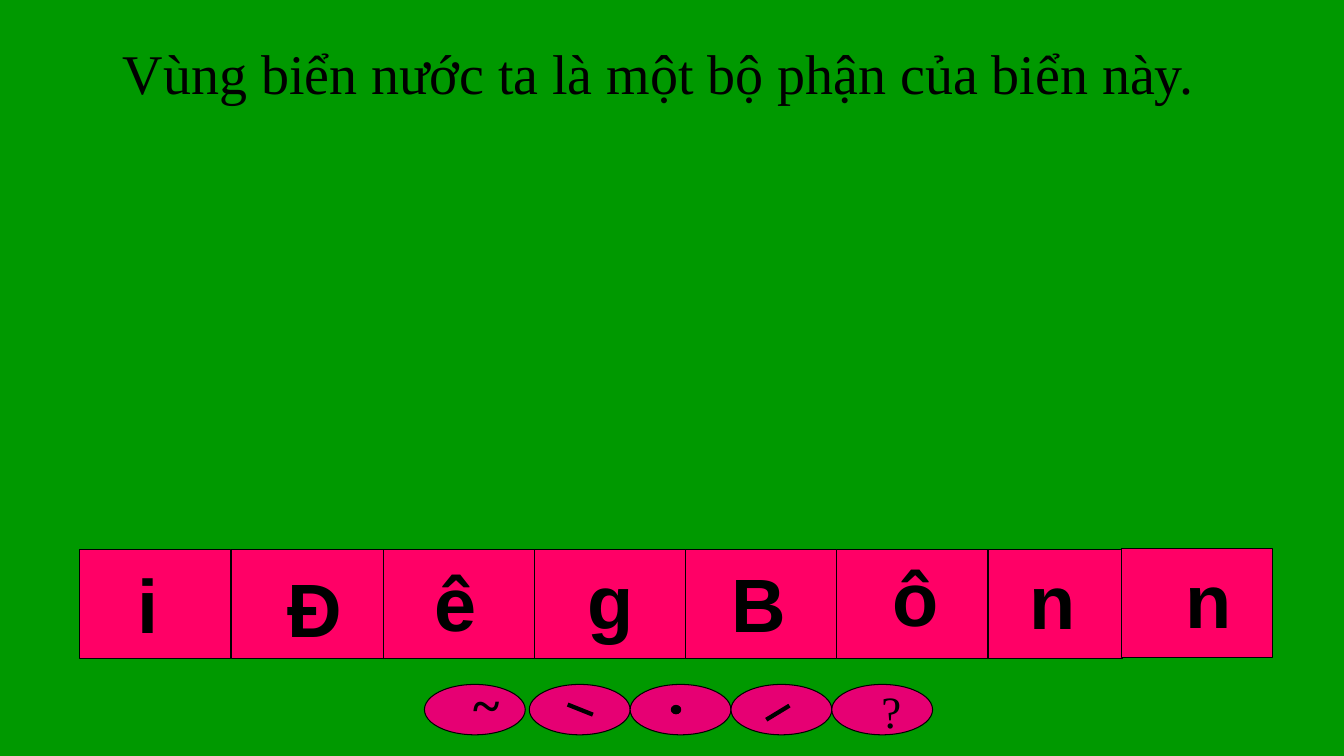
from lxml.etree import SubElement
from pptx import Presentation
from pptx.dml.color import RGBColor
from pptx.enum.shapes import MSO_CONNECTOR, MSO_SHAPE
from pptx.enum.text import MSO_ANCHOR, MSO_AUTO_SIZE, PP_ALIGN
from pptx.oxml.ns import qn
from pptx.util import Inches, Pt

HEX = {"green": "009900", "tile": "FF0066", "oval": "E60073", "ink": "000000"}
SERIF = "Times New Roman"
TITLE = {"name": SERIF, "size": Pt(40)}
LETTER = {"name": "Arial", "size": Pt(54), "bold": True}
ASK = {"name": SERIF, "size": Pt(32)}
TILDE = {"name": SERIF, "size": Pt(36), "bold": True}

# Tile left and top, then letter with its left, top and width
TILES = [
    (9.63, 5.45, "n", 10.11, 5.45, 0.66),
    (8.3, 5.45, "ô", 8.75, 5.42, 0.66),
    (6.8, 5.45, "B", 7.15, 5.48, 0.75),
    (5.3, 5.45, "g", 5.73, 5.45, 0.66),
    (3.8, 5.45, "ê", 4.21, 5.47, 0.62),
    (2.3, 5.45, "Đ", 2.75, 5.53, 0.75),
    (11.12, 5.44, "n", 11.66, 5.44, 0.66),
    (0.79, 5.45, "i", 1.26, 5.49, 0.41),
]
OVALS = [4.21, 5.25, 6.25, 7.25, 8.25]
STROKES = [(5.63, 6.99, 5.88, 7.09), (7.83, 7, 7.6, 7.14)]


def color(name):
    return RGBColor.from_string(HEX[name])


def add_shape(slide, kind, box, fill, width=0.75):
    shape = slide.shapes.add_shape(kind, *map(Inches, box))
    shape.shadow.inherit = False
    shape.fill.solid()
    shape.fill.fore_color.rgb = color(fill)
    shape.line.color.rgb = color("ink")
    shape.line.width = Pt(width)


def add_text(slide, text, box, style, wrap=True):
    """Add a centred text box that grows with its text; return its frame."""
    frame = slide.shapes.add_textbox(*map(Inches, box)).text_frame
    frame.word_wrap = wrap
    frame.auto_size = MSO_AUTO_SIZE.SHAPE_TO_FIT_TEXT
    para = frame.paragraphs[0]
    para.alignment = PP_ALIGN.CENTER
    run = para.add_run()
    run.text = text
    run.font.color.rgb = color("ink")
    for key, value in style.items():
        setattr(run.font, key, value)
    return frame


def add_title(slide, text):
    frame = add_text(slide, text, (1.12, 0.03, 11.5, 1.45), TITLE)
    frame.auto_size = MSO_AUTO_SIZE.NONE
    frame.vertical_anchor = MSO_ANCHOR.MIDDLE
    frame.paragraphs[0].alignment = PP_ALIGN.LEFT
    frame.paragraphs[0].line_spacing = 0.9


def add_stroke(slide, ends):
    line = slide.shapes.add_connector(MSO_CONNECTOR.STRAIGHT, *map(Inches, ends))
    line.line.color.rgb = color("ink")
    line.line.width = Pt(3)
    SubElement(line._element.spPr, qn("a:effectLst"))


def add_tile(slide, left, top, letter, x, y, width):
    add_shape(slide, MSO_SHAPE.RECTANGLE, (left, top, 1.5, 1.08), "tile")
    add_text(slide, letter, (x, y, width, 1.01), LETTER, wrap=False)


def main():
    deck = Presentation()
    deck.slide_width, deck.slide_height = Inches(13.33), Inches(7.5)
    slide = deck.slides.add_slide(deck.slide_layouts[6])
    back = slide.background.fill
    back.solid()
    back.fore_color.rgb = color("green")

    add_title(slide, "Vùng biển nước ta là một bộ phận của biển này.")
    for tile in TILES:
        add_tile(slide, *tile)
    for left in OVALS:
        add_shape(slide, MSO_SHAPE.OVAL, (left, 6.79, 1, 0.5), "oval")
    for ends in STROKES:
        add_stroke(slide, ends)
    add_shape(slide, MSO_SHAPE.OVAL, (6.66, 7, 0.09, 0.08), "ink", 1)
    add_text(slide, "?", (8.67, 6.73, 0.17, 0.64), ASK)
    add_text(slide, "~", (4.62, 6.63, 0.17, 0.71), TILDE)
    deck.save("out.pptx")


if __name__ == "__main__":
    main()
